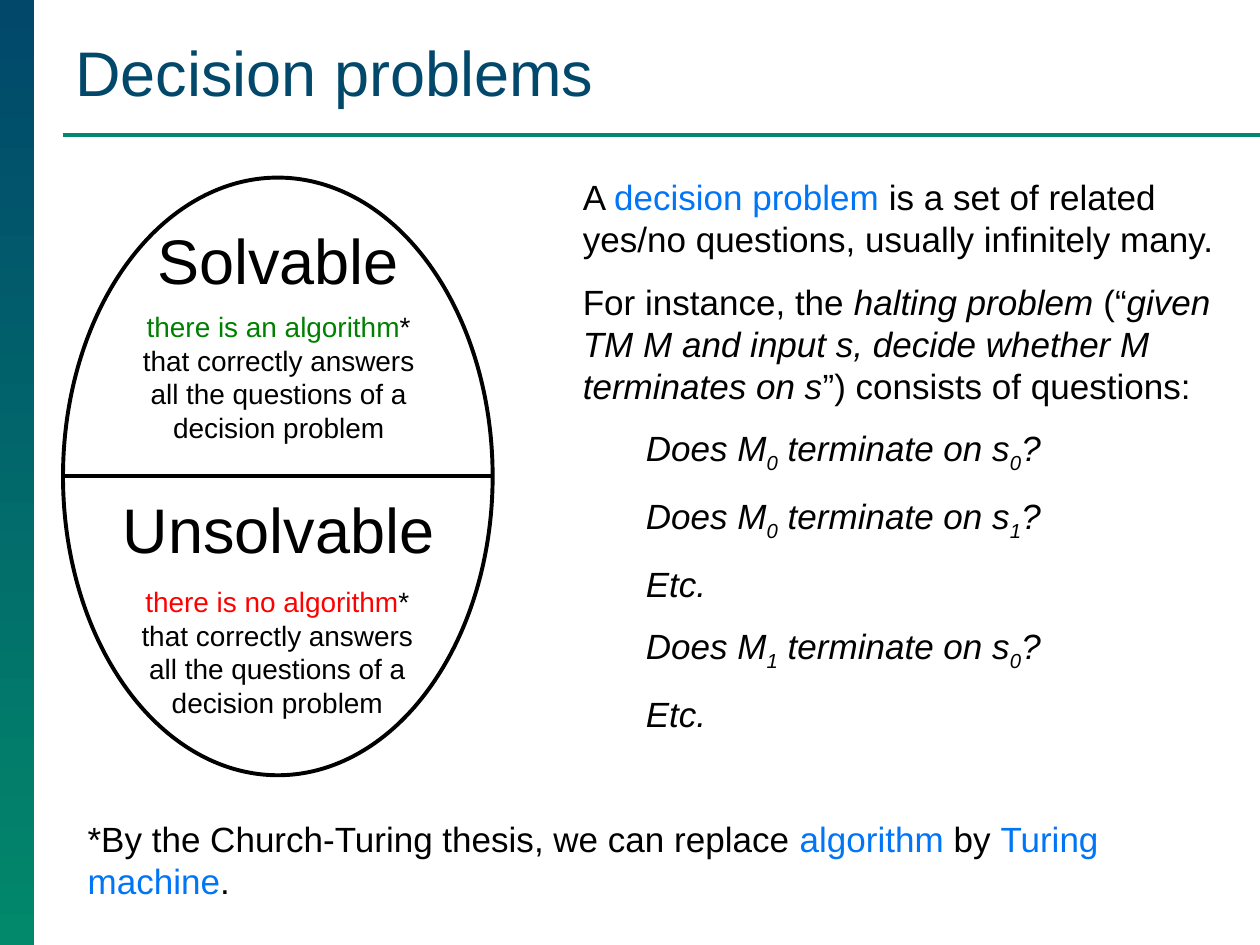
"""Build the slide on solvable and unsolvable decision problems."""
from pptx import Presentation
from pptx.dml.color import RGBColor
from pptx.enum.shapes import MSO_CONNECTOR, MSO_SHAPE
from pptx.enum.text import MSO_ANCHOR, MSO_AUTO_SIZE, PP_ALIGN
from pptx.oxml.ns import qn
from pptx.util import Pt
from lxml.etree import SubElement

NAVY, TEAL, BLACK, BLUE = "01486B", "02886B", "000000", "0075F6"
GREEN, RED = "008000", "FF0000"


def paint(color, value):
    color.rgb = RGBColor.from_string(value)


def add_text(shapes, place, paragraphs, size=20, color=BLACK, align=PP_ALIGN.LEFT,
             anchor=MSO_ANCHOR.TOP, wrap=True, grow=True):
    box = shapes.add_textbox(*map(Pt, place))
    frame = box.text_frame
    frame.word_wrap = wrap
    frame.auto_size = MSO_AUTO_SIZE.SHAPE_TO_FIT_TEXT if grow else MSO_AUTO_SIZE.NONE
    frame.vertical_anchor = anchor
    for index, (indent, spans) in enumerate(paragraphs):
        para = frame.paragraphs[0] if index == 0 else frame.add_paragraph()
        para.alignment = align
        if index:
            para.space_before = Pt(11.5)
        if indent:
            para.level = 1
            properties = para._p.get_or_add_pPr()
            properties.set("marL", str(Pt(indent)))
            properties.set("indent", "0")
        for text, style in spans:
            span = para.add_run()
            span.text = text
            span.font.name = "Arial"
            span.font.size = Pt(size)
            span.font.italic = style in ("italic", "sub")
            paint(span.font.color, style if style in (BLUE, GREEN, RED) else color)
            if style == "sub":
                span._r.get_or_add_rPr().set("baseline", "-25000")


deck = Presentation()
deck.slide_width, deck.slide_height = Pt(720), Pt(540)
page = deck.slides.add_slide(deck.slide_layouts[6])

band = page.shapes.add_shape(MSO_SHAPE.RECTANGLE, Pt(0), Pt(0), Pt(19.5), Pt(540))
band.shadow.inherit = False
band.line.fill.background()
band.fill.gradient()
band.fill.gradient_angle = 270
for stop, position, color in zip(band.fill.gradient_stops, (0, 1), (NAVY, TEAL)):
    stop.position = position
    paint(stop.color, color)

diagram = page.shapes.add_group_shape()
oval = diagram.shapes.add_shape(MSO_SHAPE.OVAL, Pt(36), Pt(101.5), Pt(245.5), Pt(341.5))
oval.shadow.inherit = False
oval.fill.background()
paint(oval.line.color, BLACK)
oval.line.width = Pt(2.25)

for shapes, right, height, color in ((page.shapes, 720, 77, TEAL),
                                     (diagram.shapes, 281.5, 272.25, BLACK)):
    rule = shapes.add_connector(MSO_CONNECTOR.STRAIGHT, Pt(36), Pt(height), Pt(right), Pt(height))
    paint(rule.line.color, color)
    rule.line.width = Pt(2.25)
    SubElement(rule._element.spPr, qn("a:effectLst"))

add_text(page.shapes, (36, 15, 668, 51), [(0, [("Decision problems", "")])],
         size=36, color=NAVY, anchor=MSO_ANCHOR.BOTTOM, grow=False)

for heading, heading_place, claim, color, claim_place in (
    ("Solvable", (82, 123, 154, 51), "there is an algorithm", GREEN, (65, 173.5, 188.5, 85)),
    ("Unsolvable", (62, 276.5, 194.5, 51), "there is no algorithm", RED, (66, 330.5, 185, 85)),
):
    add_text(diagram.shapes, heading_place, [(0, [(heading, "")])],
             size=36, align=PP_ALIGN.CENTER, wrap=False)
    add_text(page.shapes, claim_place, [(0, [
        (claim, color),
        ("* that correctly answers all the questions of a decision problem", ""),
    ])], size=16, align=PP_ALIGN.CENTER)

explanation = [
    (0, [("A ", ""), ("decision problem ", BLUE),
         ("is a set of related yes/no questions, usually infinitely many.", "")]),
    (0, [("For instance, the ", ""), ("halting problem ", "italic"), ("(“", ""),
         ("given TM M and input s, decide whether M terminates on s", "italic"),
         ("”) consists of questions:", "")]),
]
for question in (("0", "0"), ("0", "1"), None, ("1", "0"), None):
    if question:
        machine, word = question
        spans = [("Does M", "italic"), (machine, "sub"), (" terminate on s", "italic"),
                 (word, "sub"), ("?", "italic")]
    else:
        spans = [("Etc.", "italic")]
    explanation.append((36, spans))
add_text(page.shapes, (326, 97, 379, 322.5), explanation)

add_text(page.shapes, (43, 463.5, 653, 55.5), [(0, [
    ("*By the Church-Turing thesis, we can replace ", ""), ("algorithm", BLUE),
    (" by ", ""), ("Turing machine", BLUE), (".", ""),
])])

deck.save("out.pptx")
